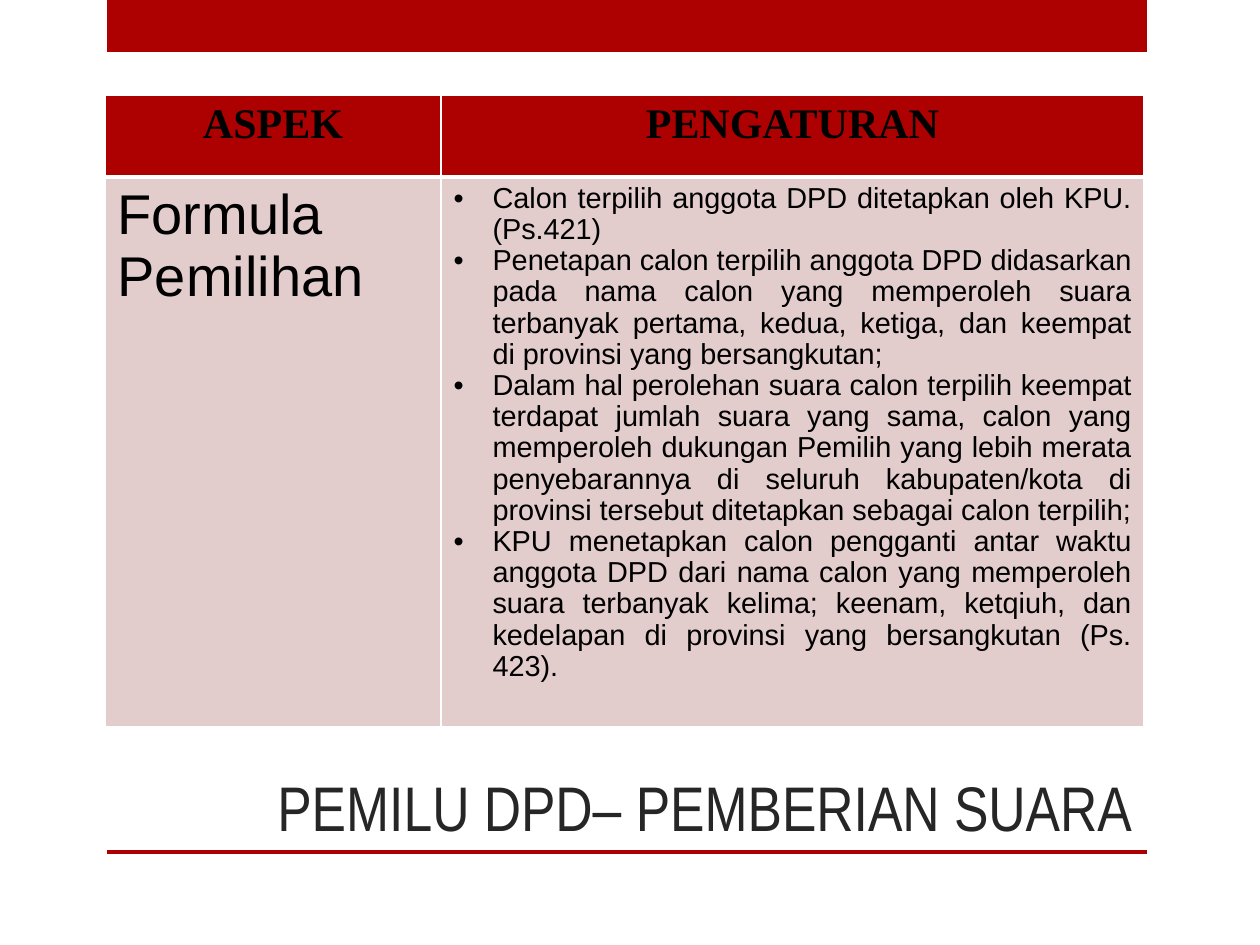
from dataclasses import dataclass

from lxml import etree
from pptx import Presentation, util as u
from pptx.dml.color import RGBColor
from pptx.enum import shapes, text
from pptx.oxml.ns import qn

# Content
TITLE = "PEMILU DPD– PEMBERIAN SUARA"
HEADERS = ["ASPEK", "PENGATURAN"]
ASPECT = "Formula Pemilihan"
RULES = [
    "Calon terpilih anggota DPD ditetapkan oleh KPU. (Ps.421)",
    "Penetapan calon terpilih anggota DPD didasarkan pada nama calon yang memperoleh "
    "suara terbanyak pertama, kedua, ketiga, dan keempat di provinsi yang bersangkutan;",
    "Dalam hal perolehan suara calon terpilih keempat terdapat jumlah suara yang sama, "
    "calon yang memperoleh dukungan Pemilih yang lebih merata penyebarannya di seluruh "
    "kabupaten/kota di provinsi tersebut ditetapkan sebagai calon terpilih;",
    "KPU menetapkan calon pengganti antar waktu anggota DPD dari nama calon yang "
    "memperoleh suara terbanyak kelima; keenam, ketqiuh, dan kedelapan di provinsi "
    "yang bersangkutan (Ps. 423).",
]


@dataclass(frozen=True)
class Theme:
    red: str = "AD0101"
    pink: str = "E3CCCC"
    white: str = "FFFFFF"
    black: str = "000000"
    title_color: str = "262626"
    title: tuple = ("Arial Narrow", 36)
    header: tuple = ("Times New Roman", 24)
    aspect: tuple = ("Arial", 32)
    rule: tuple = ("Arial", 16.5)


THEME = Theme()

# Layout in px
SCALE = 914400 // 126
SLIDE = (1260, 945)
BARS = [(107, 0, 1040, 52), (107, 850, 1040, 4)]
TITLE_BOX = (105, 630, 1040, 220)
TABLE_LEFT, TABLE_TOP = 105, 95
COLUMNS = [336, 703]
ROWS = [82, 548]
INDENT = 39


def px(*lengths):
    return [u.Emu(length * SCALE) for length in lengths]


def write(text_frame, lines, style, color, align, bold=False):
    text_frame.text = "\n".join(lines)
    for paragraph in text_frame.paragraphs:
        paragraph.alignment = align
        for run in paragraph.runs:
            run.font.name, run.font.size = style[0], u.Pt(style[1])
            run.font.bold = bold
            run.font.color.rgb = RGBColor.from_string(color)


def add_bullet(paragraph):
    paragraph.line_spacing = 0.97
    properties = paragraph._p.get_or_add_pPr()
    indent = px(INDENT)[0]
    properties.set("marL", str(indent))
    properties.set("indent", str(-indent))
    etree.SubElement(properties, qn("a:buFont"), typeface="Arial")
    etree.SubElement(properties, qn("a:buChar"), char="•")


def style_cell(cell, fill, widths):
    """Fill the cell and draw its borders; widths maps each side to points."""
    properties = cell._tc.get_or_add_tcPr()
    for side, width in widths.items():
        line = etree.SubElement(properties, qn(f"a:ln{side}"), w=str(u.Pt(width)))
        solid = etree.SubElement(line, qn("a:solidFill"))
        etree.SubElement(solid, qn("a:srgbClr"), val=THEME.white)
    cell.fill.solid()
    cell.fill.fore_color.rgb = RGBColor.from_string(fill)


def add_bars(slide):
    for box in BARS:
        bar = slide.shapes.add_shape(shapes.MSO_SHAPE.RECTANGLE, *px(*box))
        bar.shadow.inherit = False
        bar.fill.solid()
        bar.fill.fore_color.rgb = RGBColor.from_string(THEME.red)
        bar.line.fill.background()


def add_title(slide):
    text_frame = slide.shapes.add_textbox(*px(*TITLE_BOX)).text_frame
    text_frame.word_wrap = True
    text_frame.vertical_anchor = text.MSO_ANCHOR.BOTTOM
    write(text_frame, [TITLE], THEME.title, THEME.title_color, text.PP_ALIGN.RIGHT)


def add_rules_table(slide):
    frame = slide.shapes.add_table(
        len(ROWS), len(COLUMNS), *px(TABLE_LEFT, TABLE_TOP, sum(COLUMNS), sum(ROWS)))
    table = frame.table
    for column, width in zip(table.columns, px(*COLUMNS)):
        column.width = width
    for row, height in zip(table.rows, px(*ROWS)):
        row.height = height

    # Header row, with a thick rule below it
    for index, header in enumerate(HEADERS):
        cell = table.cell(0, index)
        write(cell.text_frame, [header], THEME.header, THEME.black,
              text.PP_ALIGN.CENTER, bold=True)
        style_cell(cell, THEME.red, {"L": 1, "R": 1, "T": 1, "B": 3})

    # Body row
    aspect, rules = table.cell(1, 0), table.cell(1, 1)
    write(aspect.text_frame, [ASPECT], THEME.aspect, THEME.black, text.PP_ALIGN.LEFT)
    write(rules.text_frame, RULES, THEME.rule, THEME.black, text.PP_ALIGN.JUSTIFY)
    for paragraph in rules.text_frame.paragraphs:
        add_bullet(paragraph)
    for cell in (aspect, rules):
        style_cell(cell, THEME.pink, {"L": 1, "R": 1, "T": 3, "B": 1})


def main():
    presentation = Presentation()
    presentation.slide_width, presentation.slide_height = px(*SLIDE)
    slide = presentation.slides.add_slide(presentation.slide_layouts[6])
    add_bars(slide)
    add_title(slide)
    add_rules_table(slide)
    presentation.save("out.pptx")


if __name__ == "__main__":
    main()
